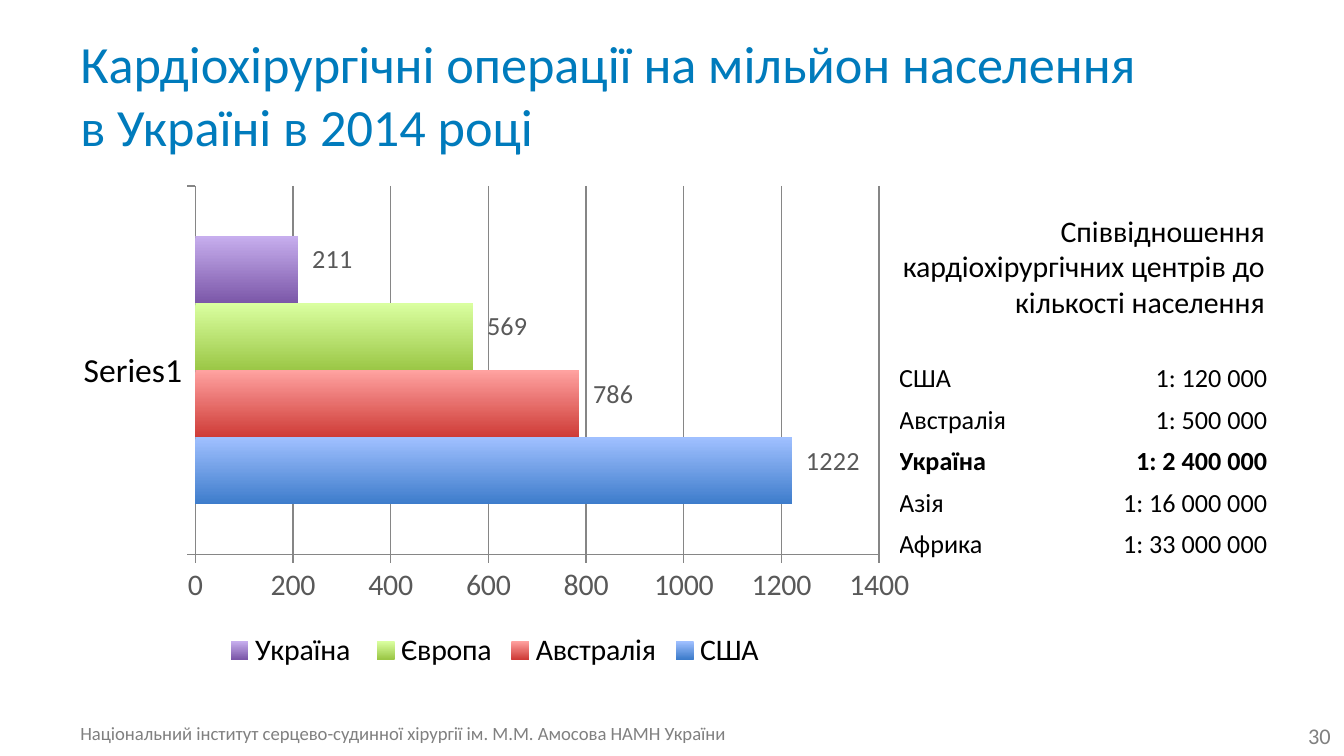
from lxml import etree
from pptx import Presentation
from pptx.chart.data import CategoryChartData
from pptx.dml.color import RGBColor
from pptx.enum.chart import XL_CHART_TYPE as ChartType, XL_LABEL_POSITION as LabelPos
from pptx.enum.chart import XL_LEGEND_POSITION as LegendPos, XL_TICK_MARK as Tick
from pptx.enum.text import MSO_ANCHOR as Anchor, PP_ALIGN as Align
from pptx.oxml.ns import qn
from pptx.util import Inches, Pt


def style(font, color, **formats):
    font.color.rgb = RGBColor.from_string(color)
    for name, value in {"name": "Calibri", **formats}.items():
        setattr(font, name, value)


def manual_layout(parent, index, **values):
    for old in parent.findall(qn("c:layout")):
        parent.remove(old)
    layout = etree.Element(qn("c:layout"))
    manual = etree.SubElement(layout, qn("c:manualLayout"))
    for tag, value in values.items():
        etree.SubElement(manual, qn("c:" + tag), val=str(value))
    parent.insert(index, layout)


prs = Presentation()
prs.slide_width = Inches(10)
prs.slide_height = prs.slide_width * 9 // 16
slide = prs.slides.add_slide(prs.slide_layouts[6])

texts = [
    ("Національний інститут серцево-судинної хірургії ім. М.М. Амосова НАМН України",
     (0.5, 5.32, 5.33, 0.27), 10, "808080", Align.LEFT, Anchor.TOP),
    ("Кардіохірургічні операції на мільйон населення в Україні в 2014 році",
     (0.5, 0.23, 8.23, 0.94), 28, "007BBC", Align.LEFT, Anchor.MIDDLE),
    ("Співвідношення кардіохірургічних центрів до кількості населення",
     (6.34, 1.53, 3.17, 0.87), 16, "000000", Align.RIGHT, Anchor.TOP),
    ("30", (7.67, 5.32, 2.33, 0.3), 12, "808080", Align.RIGHT, Anchor.MIDDLE),
]
for wording, place, size, color, align, anchor in texts:
    frame = slide.shapes.add_textbox(*map(Inches, place)).text_frame
    frame.word_wrap = True
    frame.vertical_anchor = anchor
    frame.text = wording
    frame.paragraphs[0].alignment = align
    style(frame.paragraphs[0].runs[0].font, color, size=Pt(size))

operations = [
    ("США", 1222, "A0C0FF", "3D7CCB"),
    ("Австралія", 786, "FFA2A0", "CE3B37"),
    ("Європа", 569, "DAFFA0", "9BC746"),
    ("Україна ", 211, "C7AEEE", "7B57A8"),
]
chart_data = CategoryChartData()
chart_data.categories = ["Series1"]
for region, count, *_ in operations:
    chart_data.add_series(region, [count])
chart = slide.shapes.add_chart(
    ChartType.BAR_CLUSTERED, Inches(0.5), Inches(1.31), Inches(6.36), Inches(3.71), chart_data
).chart
style(chart.font, "000000", size=Pt(18))
chart.has_title = False
chart.has_legend = True
chart.legend.position = LegendPos.BOTTOM
chart.legend.include_in_layout = False
style(chart.legend.font, "000000", size=Pt(16))

counts, regions = chart.value_axis, chart.category_axis
counts.minimum_scale, counts.maximum_scale, counts.major_unit = 0, 1400, 200
counts.has_major_gridlines = True
style(counts.tick_labels.font, "595959", size=Pt(16))
style(regions.tick_labels.font, "000000", size=Pt(18))
for axis in (counts, regions):
    axis.major_tick_mark = Tick.OUTSIDE
for line in (counts.format.line, regions.format.line, counts.major_gridlines.format.line):
    line.color.rgb = RGBColor.from_string("868686")
    line.width = Pt(0.75)

plot = chart.plots[0]
plot.gap_width = 150
plot.overlap = 0
plot.vary_by_categories = False
for series, (region, count, light, dark) in zip(plot.series, operations):
    fill = series.format.fill
    fill.gradient()
    fill.gradient_angle = 270
    for stop, color in zip(fill.gradient_stops, (light, dark)):
        stop.color.rgb = RGBColor.from_string(color)
    label = series.points[0].data_label
    style(label.font, "595959", size=Pt(14))
    label.position = LabelPos.OUTSIDE_END
    labels = series.data_labels
    style(labels.font, "595959", size=Pt(14))
    labels.show_value = True
    manual_layout(labels._element.find(qn("c:dLbl")), 1, x=0.01, y=-0.02)
    for leader in labels._element.findall(qn("c:showLeaderLines")):
        leader.set("val", "0")

manual_layout(chart._chartSpace.chart.plotArea, 0, layoutTarget="inner",
              xMode="edge", yMode="edge", x=0.15, y=0.02, w=0.8, h=0.74)

ratios = [
    ("США", "1: 120 000"),
    ("Австралія", "1: 500 000"),
    ("Україна", "1: 2 400 000"),
    ("Азія", "1: 16 000 000"),
    ("Африка", "1: 33 000 000"),
]
table = slide.shapes.add_table(
    len(ratios), 2, Inches(6.69), Inches(2.63), Inches(2.74), Inches(1.54)
).table
table.first_row = table.horz_banding = False
for column, width in zip(table.columns, (1.27, 1.47)):
    column.width = Inches(width)
cell_format = {"margin_left": 0, "margin_right": 0, "margin_top": 0, "margin_bottom": 0,
               "vertical_anchor": Anchor.BOTTOM}
for row, ratio in enumerate(ratios):
    for col, align in enumerate((Align.LEFT, Align.RIGHT)):
        cell = table.cell(row, col)
        for name, value in cell_format.items():
            setattr(cell, name, value)
        cell.fill.background()
        cell.text = ratio[col]
        entry = cell.text_frame.paragraphs[0]
        entry.alignment = align
        style(entry.runs[0].font, "000000", size=Pt(14), bold=ratio[0] == "Україна")

prs.save("out.pptx")
